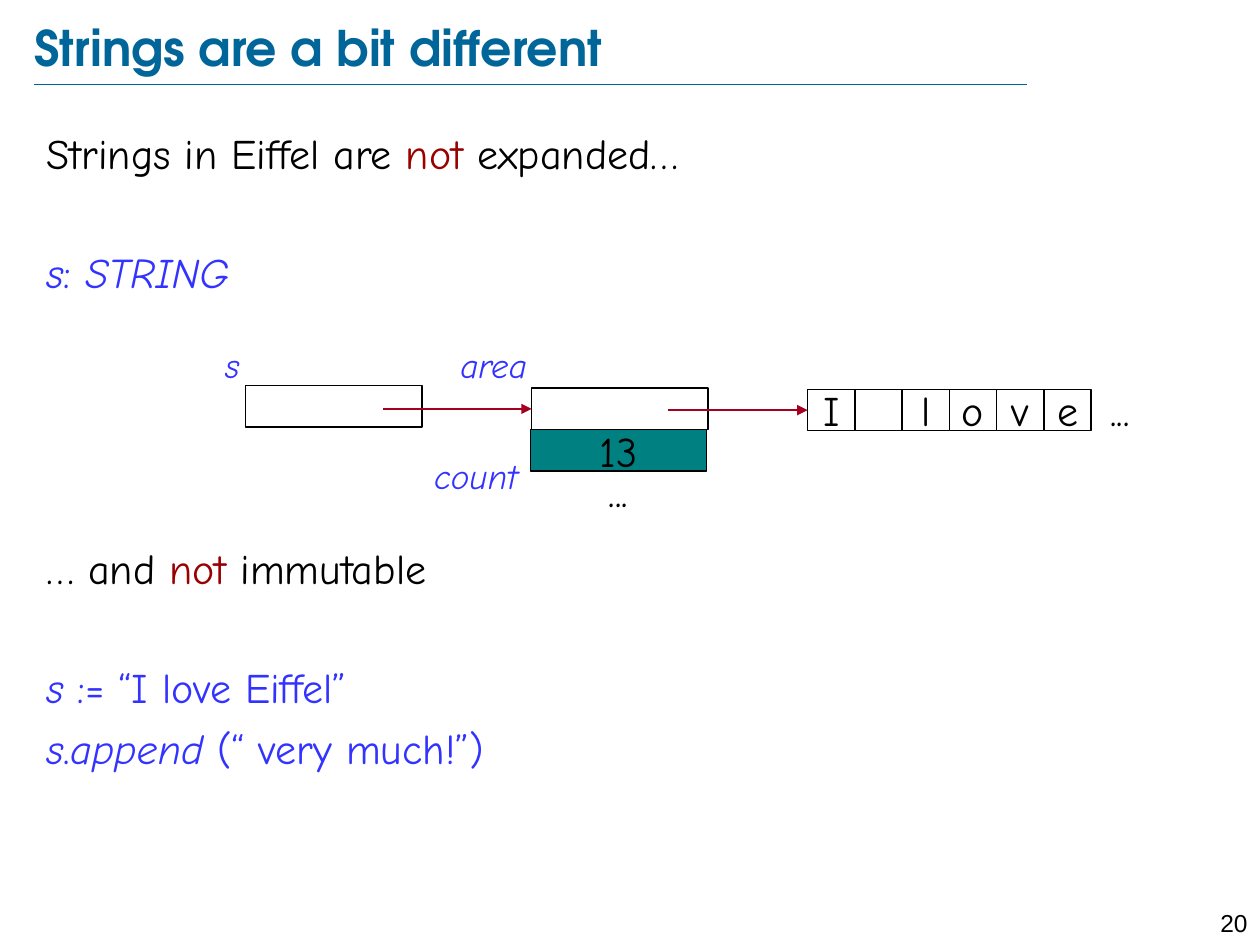
from typing import NamedTuple, Optional

import pptx
import pptx.dml.color
import pptx.enum.shapes
import pptx.enum.text
import pptx.oxml
import pptx.oxml.ns
import pptx.util
from pptx.util import Inches

COLORS = {
    "title": "006699", "text": "000000", "emphasis": "990000", "code": "3333FF",
    "arrow": "A50021", "cell": "FFFFFF", "count": "008080",
}
FONT = "Comic Neue"
ALIGN = pptx.enum.text.PP_ALIGN
ANCHOR = pptx.enum.text.MSO_ANCHOR
ROW_HEIGHT = 0.33
FIELD_WIDTH = 1.4
LETTER_WIDTH = 0.375
LETTERS_LEFT, LETTERS_TOP = 6.41, 3.09


class Span(NamedTuple):
    text: str
    color: str = "text"
    italic: bool = False
    size: float = 24
    font: str = FONT
    bold: bool = False


class Line(NamedTuple):
    spans: list[Span]
    space_before: float = 0


class Cell(NamedTuple):
    left: float
    top: float
    width: float
    text: str = ""
    fill: str = "cell"
    outlined: bool = True


class Label(NamedTuple):
    text: str
    left: float
    top: float
    width: float


def rgb(name: str) -> pptx.dml.color.RGBColor:
    return pptx.dml.color.RGBColor.from_string(COLORS[name])


def write_line(para, line: Line, align) -> None:
    para.alignment = align
    para.space_before = pptx.util.Pt(line.space_before)
    for span in line.spans:
        run = para.add_run()
        run.text = span.text
        run.font.name = span.font
        run.font.size = pptx.util.Pt(span.size)
        run.font.bold = span.bold
        run.font.italic = span.italic
        run.font.color.rgb = rgb(span.color)


def add_text(page, left: float, top: float, width: float, height: float,
             lines: list[Line], align=ALIGN.LEFT, anchor=ANCHOR.TOP,
             inset: Optional[float] = None) -> None:
    box = page.shapes.add_textbox(Inches(left), Inches(top), Inches(width), Inches(height))
    frame = box.text_frame
    frame.word_wrap = True
    frame.vertical_anchor = anchor
    if inset is not None:
        frame.margin_left = frame.margin_right = Inches(inset)
        frame.margin_top = frame.margin_bottom = Inches(inset)
    for index, line in enumerate(lines):
        para = frame.add_paragraph() if index else frame.paragraphs[0]
        write_line(para, line, align)


def add_cell(page, cell: Cell):
    box = page.shapes.add_shape(
        pptx.enum.shapes.MSO_SHAPE.RECTANGLE, Inches(cell.left), Inches(cell.top),
        Inches(cell.width), Inches(ROW_HEIGHT))
    box.shadow.inherit = False
    box.fill.solid()
    box.fill.fore_color.rgb = rgb(cell.fill)
    if cell.outlined:
        box.line.color.rgb = rgb("text")
        box.line.width = pptx.util.Pt(0.75)
    else:
        box.line.fill.background()
    if cell.text:
        frame = box.text_frame
        frame.word_wrap = False
        frame.vertical_anchor = ANCHOR.MIDDLE
        write_line(frame.paragraphs[0], Line([Span(cell.text)]), ALIGN.CENTER)
    return box


def add_line(page, left: float, right: float, y: float, color: str, width: float):
    line = page.shapes.add_connector(
        pptx.enum.shapes.MSO_CONNECTOR.STRAIGHT,
        Inches(left), Inches(y), Inches(right), Inches(y))
    line.line.color.rgb = rgb(color)
    line.line.width = pptx.util.Pt(width)
    line._element.spPr.append(pptx.oxml.parse_xml(
        f"<a:effectLst {pptx.oxml.ns.nsdecls('a')}/>"))
    return line


def add_reference(page, start: float, cell: Cell, target) -> None:
    """Draw an arrow to the middle of the target's left side."""
    arrow = add_line(page, start, cell.left, cell.top + ROW_HEIGHT / 2, "arrow", 1.5)
    arrow.end_connect(target, 1)
    arrow.line._get_or_add_ln().append(pptx.oxml.parse_xml(
        f"<a:tailEnd {pptx.oxml.ns.nsdecls('a')} type='triangle'/>"))


def main() -> None:
    deck = pptx.Presentation()
    deck.slide_width, deck.slide_height = Inches(10), Inches(7.5)
    page = deck.slides.add_slide(deck.slide_layouts[6])

    # Title, rule and page number
    add_line(page, 0.27, 8.15, 0.67, "title", 0.25)
    title = Span("Strings are a bit different", "title", size=28,
                 font="TeX Gyre Adventor", bold=True)
    add_text(page, 0.27, 0.13, 8.69, 0.48, [Line([title])], anchor=ANCHOR.MIDDLE, inset=0)
    add_text(page, 9.45, 7.16, 0.55, 0.24,
             [Line([Span("20", size=14, font="Arial")])], align=ALIGN.RIGHT)

    # Statements and code, with room for the diagram between them
    add_text(page, 0.27, 0.96, 9.4, 6.17, [
        Line([Span("Strings in Eiffel are "), Span("not ", "emphasis"), Span("expanded…")]),
        Line([Span("s", "code", True), Span(": ", "code"), Span("STRING", "code", True)], 39.5),
        Line([Span("… and "), Span("not", "emphasis"), Span(" immutable")], 140),
        Line([Span("s", "code", True), Span(" := “I love Eiffel”", "code")], 39.5),
        Line([Span("s", "code", True), Span(".", "code"), Span("append", "code", True),
              Span(" (“ very much!”)", "code")], 6),
    ])

    # Variable and string object
    add_cell(page, Cell(1.95, 3.06, FIELD_WIDTH))
    area = Cell(4.22, 3.08, FIELD_WIDTH)
    area_box = add_cell(page, area)
    add_cell(page, Cell(4.21, 3.73, FIELD_WIDTH, "...", outlined=False))
    add_cell(page, Cell(4.21, 3.41, FIELD_WIDTH, "13", "count"))

    # Character array
    letters = [Cell(LETTERS_LEFT + index * LETTER_WIDTH, LETTERS_TOP, LETTER_WIDTH, letter.strip())
               for index, letter in enumerate("I love")]
    letter_boxes = [add_cell(page, letter) for letter in letters]
    add_cell(page, Cell(8.7, LETTERS_TOP, LETTER_WIDTH, "...", outlined=False))

    # References
    add_reference(page, 3.04, area, area_box)
    add_reference(page, 5.3, letters[0], letter_boxes[0])

    # Field names
    for label in (Label("s", 1.56, 2.68, 0.44), Label("area", 3.27, 2.68, 1.01),
                  Label("count", 3.2, 3.56, 1.01)):
        add_text(page, label.left, label.top, label.width, 0.44,
                 [Line([Span(label.text, "code", True, 20)])], align=ALIGN.RIGHT)

    deck.save("out.pptx")


if __name__ == "__main__":
    main()
